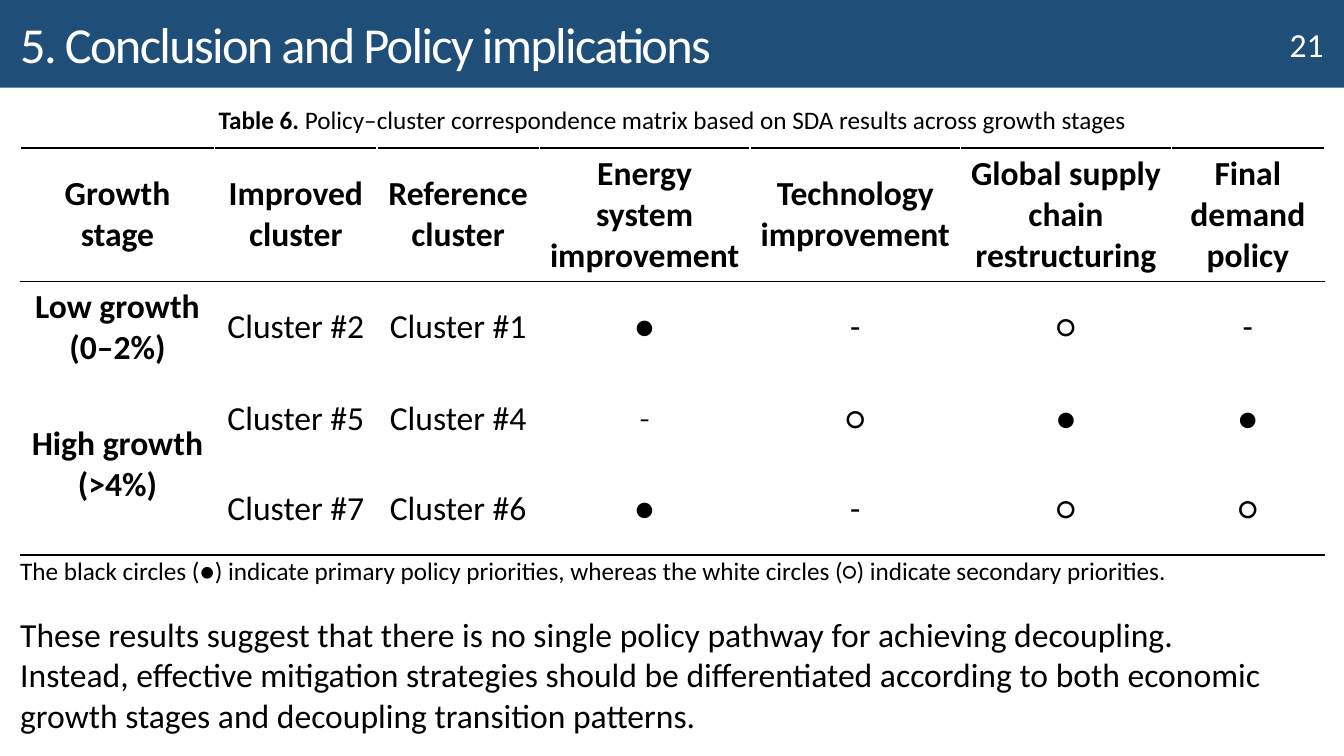
from lxml import etree
from pptx import Presentation
from pptx.dml.color import RGBColor
from pptx.enum import shapes, text
from pptx.oxml import ns
from pptx.util import Cm, Pt

NAVY = RGBColor(0x1F, 0x4E, 0x79)
WHITE = RGBColor(0xFF, 0xFF, 0xFF)
BLACK = RGBColor(0, 0, 0)
LEFT, WIDE = Cm(0.51), Cm(32.87)
BAR = Cm(2.21)
COLS = [4.9, 4.09, 4.09, 5.31, 5.31, 5.31, 3.86]
ROWS = [3.35, 2.29, 2.29, 2.29]
CELLS = [
    ["Growth stage", "Improved cluster", "Reference cluster", "Energy system improvement",
     "Technology improvement", "Global supply chain restructuring", "Final demand policy"],
    ["Low growth\n(0–2%)", "Cluster #2", "Cluster #1", "●", "-", "○", "-"],
    ["High growth\n(>4%)", "Cluster #5", "Cluster #4", "-", "○", "●", "●"],
    ["", "Cluster #7", "Cluster #6", "●", "-", "○", "○"],
]


def add_run(para, words, size, color=BLACK, bold=False, font="Calibri"):
    """Add one styled run to a paragraph."""
    run = para.add_run()
    run.text = words
    run.font.name, run.font.size = font, Pt(size)
    run.font.bold = bold
    run.font.color.rgb = color
    return run


def set_frame(frame, margins=(0, 0, 0, 0), anchor=text.MSO_ANCHOR.TOP):
    """Set wrapping, margins and anchor of a text frame."""
    frame.word_wrap = True
    frame.auto_size = text.MSO_AUTO_SIZE.NONE
    frame.vertical_anchor = anchor
    (frame.margin_left, frame.margin_top,
     frame.margin_right, frame.margin_bottom) = map(Cm, margins)


def add_text(slide, box, paras, size, align=text.PP_ALIGN.LEFT, color=BLACK, **frame):
    """Add a text box; each paragraph is a list of (words, bold) runs."""
    body = slide.shapes.add_textbox(*box).text_frame
    set_frame(body, **frame)
    for i, runs in enumerate(paras):
        para = body.add_paragraph() if i else body.paragraphs[0]
        para.alignment = align
        for words, bold in runs:
            add_run(para, words, size, color, bold)


def add_head(slide, width):
    """Draw the title bar, the title and the page number."""
    bar = slide.shapes.add_shape(shapes.MSO_SHAPE.RECTANGLE, 0, 0, width, BAR)
    bar.shadow.inherit = False
    bar.fill.solid()
    bar.fill.fore_color.rgb = NAVY
    bar.line.fill.background()
    add_text(slide, (Cm(28.96), 0, Cm(4.91), BAR), [[("21", False)]], 24,
             text.PP_ALIGN.RIGHT, WHITE, margins=(0, 0.2, 0.51, 0.2),
             anchor=text.MSO_ANCHOR.MIDDLE)
    title = slide.shapes.title
    title.left, title.top, title.width, title.height = 0, Cm(0.13), width, Cm(1.94)
    set_frame(title.text_frame, (0.51, 0.2, 0, 0.2), text.MSO_ANCHOR.MIDDLE)
    para = title.text_frame.paragraphs[0]
    para.alignment = text.PP_ALIGN.LEFT
    run = add_run(para, "5. Conclusion and Policy implications", 36, WHITE)
    run.font._element.set("spc", "-120")
    slide.shapes._spTree.append(title._element)


def set_edges(cell, top, bottom):
    """Give a cell white sides and the given top and bottom lines."""
    props = cell._tc.get_or_add_tcPr()
    edges = {"lnL": WHITE, "lnR": WHITE, "lnT": top, "lnB": bottom}
    for i, (tag, color) in enumerate(edges.items()):
        line = etree.Element(ns.qn("a:" + tag), w=str(Pt(1)))
        fill = etree.SubElement(line, ns.qn("a:solidFill"))
        etree.SubElement(fill, ns.qn("a:srgbClr"), val=str(color))
        props.insert(i, line)


def fill_cell(cell, row, col):
    """Write and style one cell of the matrix."""
    cell.fill.background()
    cell.vertical_anchor = text.MSO_ANCHOR.MIDDLE
    last = row + cell.span_height - 1 if cell.is_merge_origin else row
    set_edges(cell, BLACK if row < 2 else WHITE, BLACK if last in (0, 3) else WHITE)
    if cell.is_spanned:
        return
    font = "Cambria" if (row, col) == (2, 3) else "Calibri"
    for i, words in enumerate(CELLS[row][col].split("\n")):
        para = cell.text_frame.add_paragraph() if i else cell.text_frame.paragraphs[0]
        para.alignment = text.PP_ALIGN.CENTER
        add_run(para, words, 24, bold=row == 0 or col == 0, font=font)


def add_matrix(slide):
    """Add the policy and cluster table."""
    table = slide.shapes.add_table(len(ROWS), len(COLS), LEFT, Cm(3.73), WIDE,
                                   Cm(sum(ROWS))).table
    table.first_row = table.horz_banding = False
    for col, width in zip(table.columns, COLS):
        col.width = Cm(width)
    for row, height in zip(table.rows, ROWS):
        row.height = Cm(height)
    table.cell(2, 0).merge(table.cell(3, 0))
    for row in range(len(ROWS)):
        for col in range(len(COLS)):
            fill_cell(table.cell(row, col), row, col)


def main():
    """Build and save the slide."""
    deck = Presentation()
    deck.slide_width, deck.slide_height = Cm(33.87), Cm(19.05)
    slide = deck.slides.add_slide(deck.slide_layouts[5])
    add_head(slide, deck.slide_width)
    add_matrix(slide)
    add_text(slide, (LEFT, Cm(2.49), WIDE, Cm(1.02)),
             [[("Table 6. ", True),
               ("Policy–cluster correspondence matrix based on SDA results "
                "across growth stages", False)]],
             18, text.PP_ALIGN.CENTER, margins=(0.25, 0.13, 0.25, 0.13))
    add_text(slide, (LEFT, Cm(15.47), WIDE, Cm(3.07)),
             [[("These results suggest that there is no single policy pathway "
                "for achieving decoupling.", False)],
              [("Instead, effective mitigation strategies should be differentiated "
                "according to both economic growth stages and decoupling "
                "transition patterns.", False)]], 24)
    add_text(slide, (LEFT, Cm(14), WIDE, Cm(0.76)),
             [[("The black circles (●) indicate primary policy priorities, whereas "
                "the white circles (○) indicate secondary priorities.", False)]], 18)
    deck.save("out.pptx")


if __name__ == "__main__":
    main()
